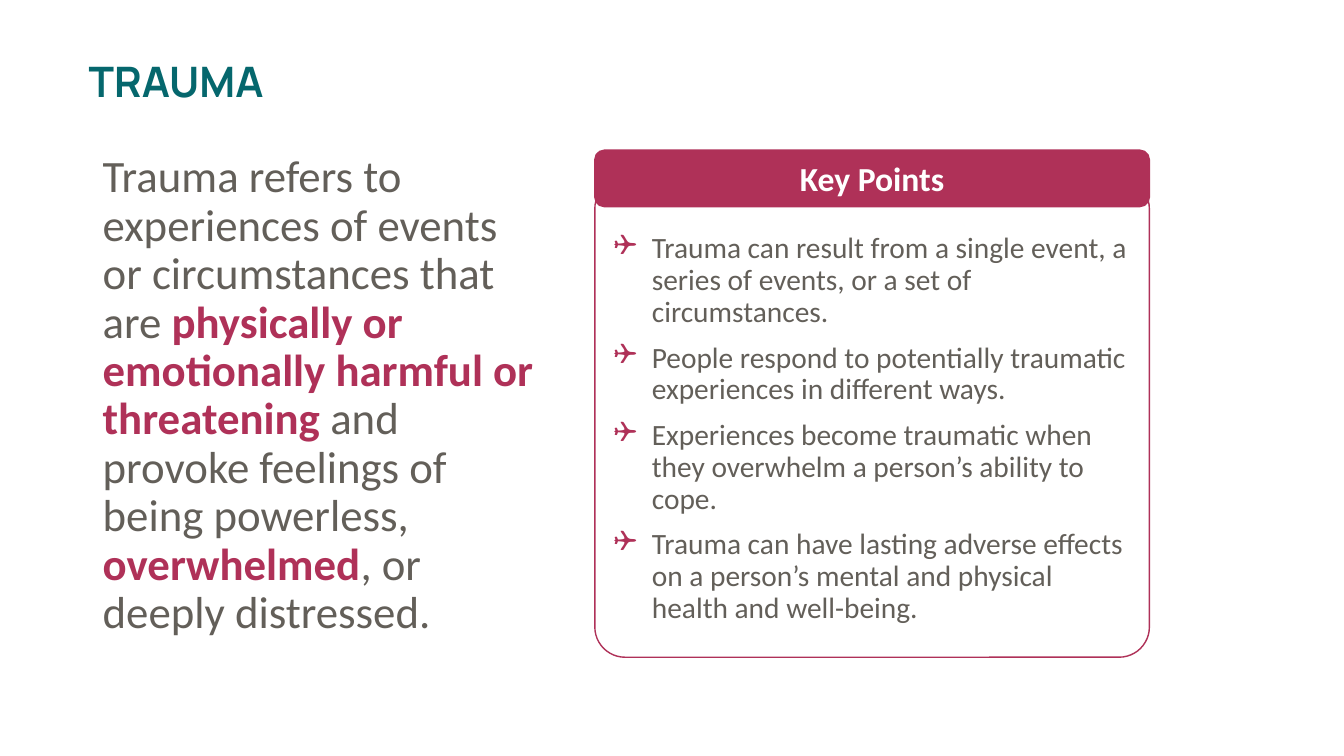
from dataclasses import dataclass

from lxml import etree
from pptx import Presentation
from pptx import util as u
from pptx.dml.color import RGBColor
from pptx.enum import shapes, text
from pptx.oxml.ns import qn


@dataclass(frozen=True)
class Theme:
    """Colours, fonts and type sizes of the slide."""
    teal: RGBColor = RGBColor.from_string("05676D")
    berry: RGBColor = RGBColor.from_string("AF3158")
    grey: RGBColor = RGBColor.from_string("635F59")
    white: RGBColor = RGBColor.from_string("FFFFFF")
    heading_font: str = "Manrope"
    body_font: str = "Calibri"
    title_size: int = 30
    definition_size: int = 32
    header_size: int = 24
    point_size: int = 21
    line_spacing: float = 0.9
    paragraph_gap: int = 10


THEME = Theme()

DEFINITION = [
    ("Trauma refers to experiences of events or circumstances that are ", False),
    ("physically or emotionally harmful or threatening ", True),
    ("and provoke feelings of being powerless, ", False),
    ("overwhelmed", True),
    (", or deeply distressed.", False),
]
KEY_POINTS = [
    "Trauma can result from a single event, a series of events, or a set of circumstances.",
    "People respond to potentially traumatic experiences in different ways.",
    "Experiences become traumatic when they overwhelm a person’s ability to cope.",
    "Trauma can have lasting adverse effects on a person’s mental and physical "
    "health and well-being.",
]


def style(font, name, size, color, bold=False):
    """Set the face, size, colour and weight of a font."""
    font.name = name
    font.size = u.Pt(size)
    font.color.rgb = color
    font.bold = bold


def add_checkbox(paragraph, indent):
    """Give a paragraph a hanging checkbox bullet."""
    properties = paragraph._p.get_or_add_pPr()
    properties.set("marL", str(indent))
    properties.set("indent", str(-indent))
    bullet_color = etree.SubElement(properties, qn("a:buClr"))
    etree.SubElement(bullet_color, qn("a:srgbClr"), val=str(THEME.berry))
    etree.SubElement(properties, qn("a:buFont"), typeface="Wingdings")
    etree.SubElement(properties, qn("a:buChar"), char="❑")


def place_title(slide, wording, left, top, width, height):
    """Move and format the title placeholder."""
    title = slide.shapes.title
    title.left, title.top, title.width, title.height = map(u.Inches, (left, top, width, height))
    frame = title.text_frame
    frame.text = wording
    frame.margin_left = u.Inches(0.88)
    frame.vertical_anchor = text.MSO_ANCHOR.MIDDLE
    heading = frame.paragraphs[0]
    heading.alignment = text.PP_ALIGN.LEFT
    heading.line_spacing = THEME.line_spacing
    style(heading.font, THEME.heading_font, THEME.title_size, THEME.teal, True)


def add_definition(slide, phrases, left, top, width, height):
    """Write the definition with its key phrases emphasised."""
    definition = slide.shapes.add_textbox(*map(u.Inches, (left, top, width, height)))
    frame = definition.text_frame
    frame.word_wrap = True
    sentence = frame.paragraphs[0]
    sentence.line_spacing = THEME.line_spacing
    for wording, emphasised in phrases:
        phrase = sentence.add_run()
        phrase.text = wording
        color = THEME.berry if emphasised else THEME.grey
        style(phrase.font, THEME.body_font, THEME.definition_size, color, emphasised)


def add_panel(group, fill, left, top, width, height):
    """Add a rounded panel with a berry outline."""
    panel = group.shapes.add_shape(
        shapes.MSO_SHAPE.ROUNDED_RECTANGLE, *map(u.Inches, (left, top, width, height)))
    panel.shadow.inherit = False
    panel.fill.solid()
    panel.fill.fore_color.rgb = fill
    panel.line.color.rgb = THEME.berry
    panel.line.width = u.Pt(1)
    panel.text_frame.word_wrap = True
    return panel


def add_key_points(slide, header, points, left, top, width, height):
    """Build the card: a bulleted panel under a header band."""
    header_height, overlap = 0.56, 0.28
    group = slide.shapes.add_group_shape()

    card = add_panel(group, THEME.white, left, top + overlap, width, height - overlap)
    card.adjustments[0] = 0.063
    frame = card.text_frame
    frame.vertical_anchor = text.MSO_ANCHOR.TOP
    frame.margin_top = u.Inches(0.46)
    for index, wording in enumerate(points):
        point = frame.add_paragraph() if index else frame.paragraphs[0]
        point.text = wording
        point.alignment = text.PP_ALIGN.LEFT
        point.line_spacing = THEME.line_spacing
        if index:
            point.space_before = u.Pt(THEME.paragraph_gap)
        add_checkbox(point, u.Inches(0.38))
        style(point.font, THEME.body_font, THEME.point_size, THEME.grey)

    band = add_panel(group, THEME.berry, left, top, width, header_height)
    band.text_frame.vertical_anchor = text.MSO_ANCHOR.MIDDLE
    label = band.text_frame.paragraphs[0]
    label.text = header
    label.alignment = text.PP_ALIGN.CENTER
    style(label.font, THEME.body_font, THEME.header_size, THEME.white, True)


def main():
    """Build the trauma slide and save it."""
    deck = Presentation()
    deck.slide_width, deck.slide_height = u.Inches(13.33), u.Inches(7.5)
    slide = deck.slides.add_slide(deck.slide_layouts[5])
    place_title(slide, "TRAUMA", 0, 0.21, 11.5, 1.25)
    add_definition(slide, DEFINITION, 0.92, 1.48, 4.51, 5.28)
    add_key_points(slide, "Key Points", KEY_POINTS, 5.9, 1.49, 5.5, 5.03)
    deck.save("out.pptx")


if __name__ == "__main__":
    main()
